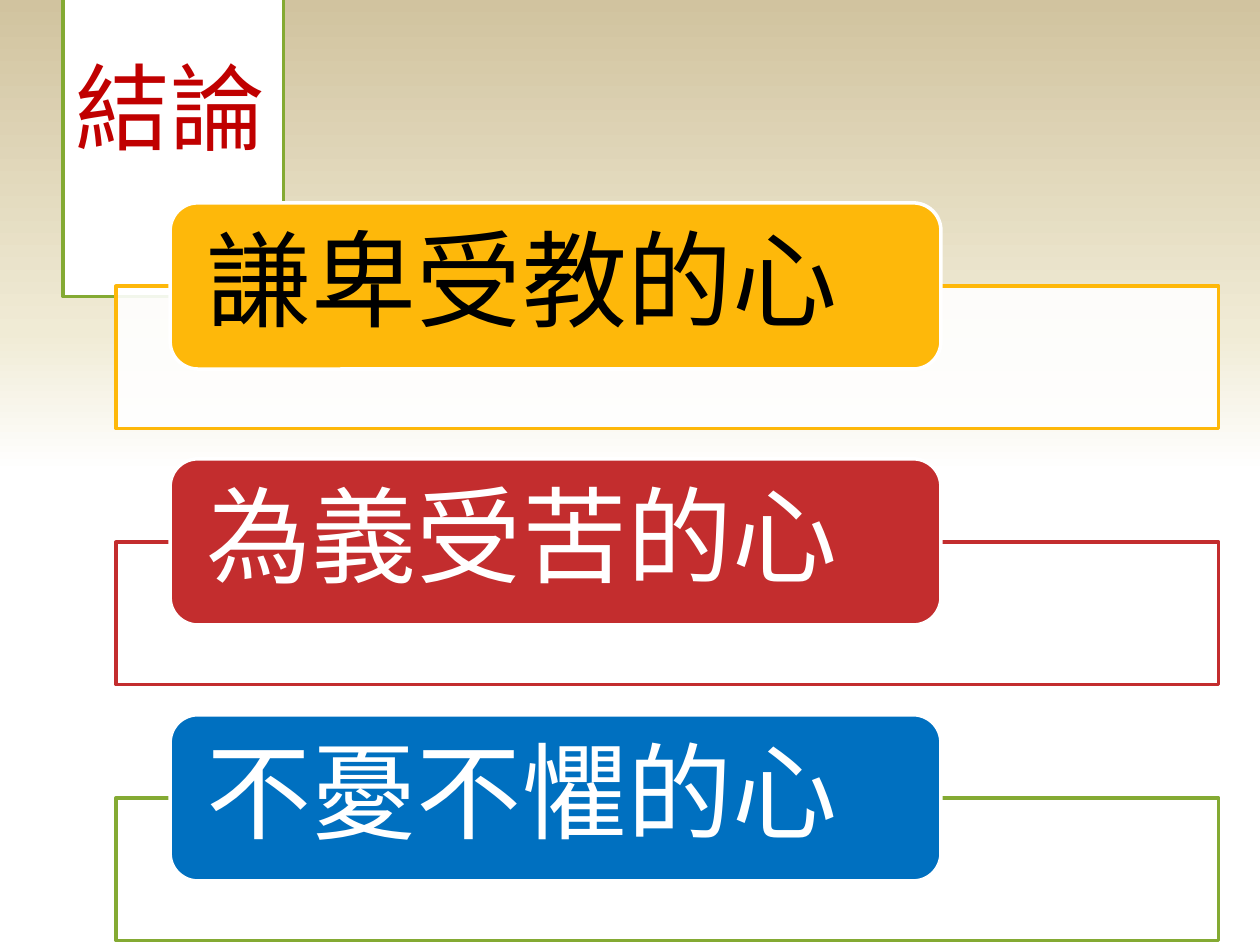
from lxml import etree
from pptx import Presentation
from pptx import util as u
from pptx.dml.color import RGBColor
from pptx.enum import shapes, text
from pptx.oxml.ns import qn

WHITE = RGBColor(0xFF, 0xFF, 0xFF)
BLACK = RGBColor(0x00, 0x00, 0x00)
CREAM = RGBColor(0xF0, 0xEB, 0xD5)
SAND = RGBColor(0xD1, 0xC3, 0x9F)
AMBER = RGBColor(0xFE, 0xB8, 0x0A)
RED = RGBColor(0xC3, 0x2D, 0x2E)
DARK_RED = RGBColor(0xC0, 0x00, 0x00)
GREEN = RGBColor(0x84, 0xAA, 0x33)
BLUE = RGBColor(0x00, 0x70, 0xC0)

# Wording, card fill, frame line, text colour
HEARTS = [
    ("謙卑受教的心", AMBER, AMBER, BLACK),
    ("為義受苦的心", RED, RED, WHITE),
    ("不憂不懼的心", BLUE, GREEN, WHITE),
]
FIRST_TOP, ROW_STEP = 4.09, 5.16
FRAME_DROP = 1.68


class SlideBuilder:
    """Holds the style and the current slide."""

    font_name = "Lato"
    line_width = u.Pt(2)

    def __init__(self, page):
        self.page = page

    def background(self, stops, angle):
        fill = self.page.background.fill
        fill.gradient()
        fill.gradient_angle = angle
        stop_list = fill._fill._gradFill.find(qn("a:gsLst"))
        for old_stop in list(stop_list):
            stop_list.remove(old_stop)
        for percent, color in stops:
            stop = etree.SubElement(stop_list, qn("a:gs"), pos=str(percent * 1000))
            etree.SubElement(stop, qn("a:srgbClr"), val=str(color))

    def paint(self, shape, fill, line):
        shape.fill.solid()
        shape.fill.fore_color.rgb = fill
        shape.line.color.rgb = line
        shape.line.width = self.line_width

    def add_wording(self, shape, wording, size, color, frame_format, line_spacing):
        frame = shape.text_frame
        frame_format = {"vertical_anchor": text.MSO_ANCHOR.MIDDLE, **frame_format}
        for name, value in frame_format.items():
            setattr(frame, name, value)
        para = frame.paragraphs[0]
        para.alignment = text.PP_ALIGN.LEFT
        para.line_spacing = line_spacing
        span = para.add_run()
        span.text = wording
        font_format = {"name": self.font_name, "size": u.Pt(size), "bold": False}
        for name, value in font_format.items():
            setattr(span.font, name, value)
        span.font.color.rgb = color

    def title(self, wording, left, top, width, height):
        box = self.page.shapes.title
        place = {"left": left, "top": top, "width": width, "height": height}
        for name, value in place.items():
            setattr(box, name, u.Cm(value))
        self.paint(box, WHITE, GREEN)
        self.add_wording(box, wording, 54, DARK_RED,
                         {"auto_size": text.MSO_AUTO_SIZE.SHAPE_TO_FIT_TEXT}, 1.0)

    def box(self, kind, place, fill, line):
        shape = self.page.shapes.add_shape(kind, *map(u.Cm, place))
        shape.shadow.inherit = False
        self.paint(shape, fill, line)
        return shape

    def frame(self, top, line):
        shape = self.box(shapes.MSO_SHAPE.RECTANGLE, (2.34, top, 22.23, 2.87), WHITE, line)
        color = shape.fill._xPr.find(qn("a:solidFill"))[0]
        etree.SubElement(color, qn("a:alpha"), val="90000")

    def card(self, top, wording, fill, color):
        shape = self.box(shapes.MSO_SHAPE.ROUNDED_RECTANGLE, (3.43, top, 15.54, 3.35), fill, WHITE)
        insets = {"margin_left": u.Cm(0.58), "margin_right": u.Cm(0.58),
                  "margin_top": 0, "margin_bottom": 0, "word_wrap": True}
        self.add_wording(shape, wording, 60, color, insets, 0.9)


def main():
    deck = Presentation()
    deck.slide_width, deck.slide_height = u.Cm(25.4), u.Cm(19.05)
    builder = SlideBuilder(deck.slides.add_slide(deck.slide_layouts.get_by_name("Title Only")))

    # Background and title
    builder.background([(50, WHITE), (65, CREAM), (100, SAND)], angle=90)
    builder.title("結論", 1.27, 0.84, 4.45, 2.57)

    # One frame with a card over it for each heart
    for row, (wording, fill, line, color) in enumerate(HEARTS):
        top = FIRST_TOP + row * ROW_STEP
        builder.frame(top + FRAME_DROP, line)
        builder.card(top, wording, fill, color)

    deck.save("out.pptx")


if __name__ == "__main__":
    main()
